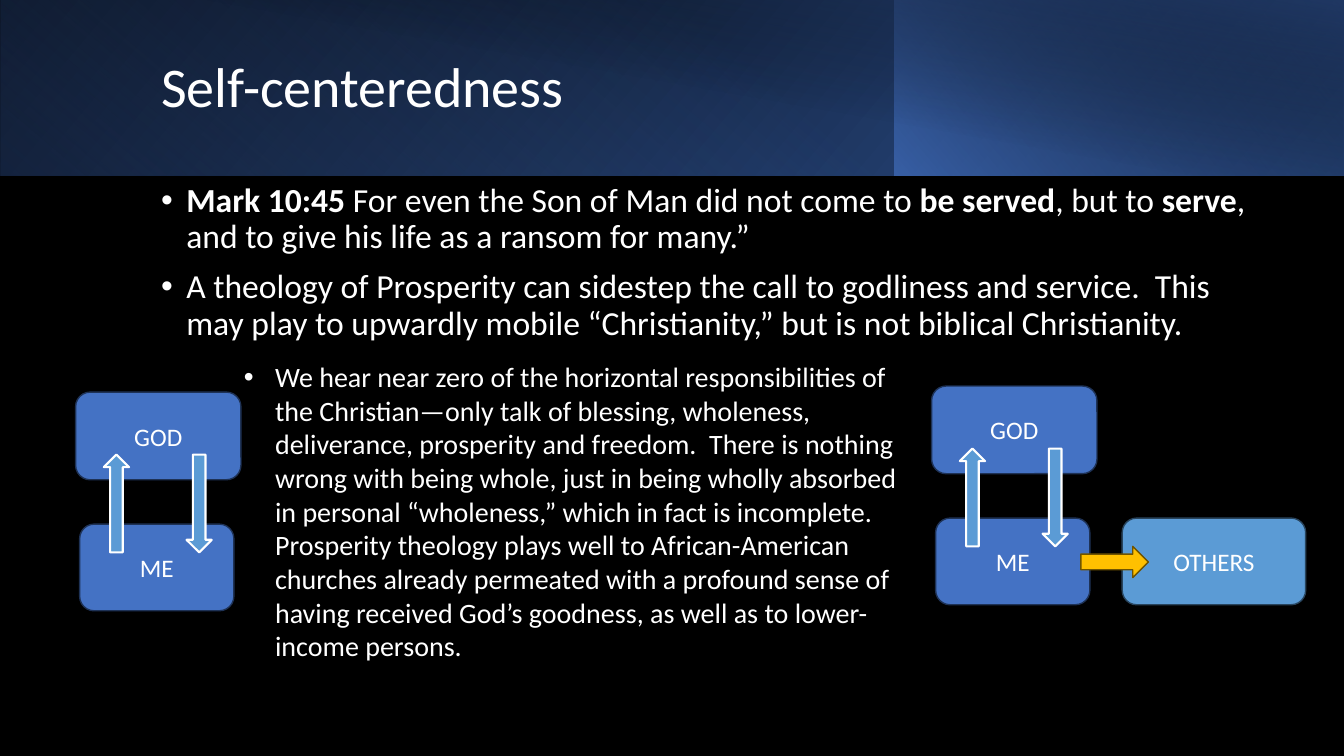
from dataclasses import dataclass
from typing import NamedTuple

from lxml import etree
from pptx import Presentation
from pptx.dml.color import RGBColor
from pptx.enum.shapes import MSO_SHAPE
from pptx.enum.text import MSO_ANCHOR, PP_ALIGN
from pptx.oxml.ns import qn
from pptx.util import Inches, Pt

RECT, ROUND = MSO_SHAPE.RECTANGLE, MSO_SHAPE.ROUNDED_RECTANGLE
UP, RIGHT = MSO_SHAPE.UP_ARROW, MSO_SHAPE.RIGHT_ARROW
MIDDLE, TOP = MSO_ANCHOR.MIDDLE, MSO_ANCHOR.TOP
CENTER = PP_ALIGN.CENTER


@dataclass(frozen=True)
class Theme:
    font: str = "Calibri"
    back: str = "000000"
    text: str = "FFFFFF"
    blue: str = "4472C4"
    edge: str = "1E3256"
    mid: str = "2F5597"
    navy: str = "203864"
    sky: str = "5B9BD5"
    sky_edge: str = "28445D"
    gold: str = "FFC000"
    gold_edge: str = "705400"
    title: int = 40
    body: int = 24
    note: int = 20
    label: int = 18


THEME = Theme()


class Area(NamedTuple):
    left: float
    top: float
    width: float
    height: float


class Stop(NamedTuple):
    place: int
    color: str
    alpha: int = 100


class Band(NamedTuple):
    area: Area
    angle: int
    stops: tuple[Stop, Stop]
    turn: int = 0
    flip: bool = True


class Part(NamedTuple):
    kind: MSO_SHAPE
    area: Area
    fill: str
    line: str
    label: str = ""
    weight: float = 1
    turn: int = 0


class Style(NamedTuple):
    size: int
    indent: float = 0
    lines: float = 1
    before: int = 0


class Span(NamedTuple):
    text: str
    bold: bool = False


BANDS = (
    Band(Area(0, 0, 13.33, 1.74), 140,
         (Stop(0, THEME.back), Stop(100, THEME.mid))),
    Band(Area(0, 0, 8.88, 1.74), 230,
         (Stop(20, THEME.blue, 0), Stop(100, THEME.navy, 55)), turn=180),
    Band(Area(8.87, 0, 4.46, 1.74), 220,
         (Stop(0, THEME.blue, 66), Stop(100, THEME.back, 30))),
    Band(Area(0.5, 0, 12.83, 1.75), 280,
         (Stop(50, THEME.back, 0), Stop(99, THEME.navy, 52)), flip=False),
)

TITLE = [[Span("Self-centeredness")]]
BODY = [
    [Span("Mark 10:45", True),
     Span(" For even the Son of Man did not come to "),
     Span("be served", True), Span(", but to "), Span("serve", True),
     Span(", and to give his life as a ransom for many.”")],
    [Span("A theology of Prosperity can sidestep the call to godliness and "
          "service.  This may play to upwardly mobile “Christianity,” but is "
          "not biblical Christianity.")],
]
NOTE = [[Span(
    "We hear near zero of the horizontal responsibilities of the "
    "Christian—only talk of blessing, wholeness, deliverance, prosperity and "
    "freedom.  There is nothing wrong with being whole, just in being wholly "
    "absorbed in personal “wholeness,” which in fact is incomplete.  "
    "Prosperity theology plays well to African-American churches already "
    "permeated with a profound sense of having received God’s goodness, as "
    "well as to lower-income persons.")]]


def pair(left: float, top: float) -> list[Part]:
    """Return the GOD and ME boxes with the two arrows between them."""
    boxes = [
        Part(ROUND, Area(left, top, 1.64, 0.87), THEME.blue, THEME.edge, "GOD"),
        Part(ROUND, Area(left + 0.04, top + 1.31, 1.53, 0.86),
             THEME.blue, THEME.edge, "ME"),
    ]
    arrows = [
        Part(UP, Area(left + shift, top + 0.62, 0.25, 0.97),
             THEME.sky, THEME.text, weight=1.5, turn=turn)
        for shift, turn in ((0.28, 0), (1.1, 180))
    ]
    return boxes + arrows


def add_shape(slide, kind: MSO_SHAPE, area: Area, turn: int):
    shape = slide.shapes.add_shape(kind, *map(Inches, area))
    shape.rotation = turn
    shape.shadow.inherit = False
    return shape


def draw_band(slide, band: Band) -> None:
    shape = add_shape(slide, RECT, band.area, band.turn)
    shape.line.fill.background()
    props = shape.element.spPr
    if band.flip:
        props.find(qn("a:xfrm")).set("flipH", "1")
    grad = etree.Element(qn("a:gradFill"), rotWithShape="1")
    stops = etree.SubElement(grad, qn("a:gsLst"))
    for stop in band.stops:
        point = etree.SubElement(stops, qn("a:gs"), pos=str(stop.place * 1000))
        color = etree.SubElement(point, qn("a:srgbClr"), val=stop.color)
        etree.SubElement(color, qn("a:alpha"), val=str(stop.alpha * 1000))
    etree.SubElement(grad, qn("a:lin"), ang=str(band.angle * 60000), scaled="0")
    props.find(qn("a:prstGeom")).addnext(grad)


def set_font(run, size: int, bold: bool = False) -> None:
    run.font.name = THEME.font
    run.font.size = Pt(size)
    run.font.bold = bold
    run.font.color.rgb = RGBColor.from_string(THEME.text)


def draw_part(slide, part: Part) -> None:
    shape = add_shape(slide, part.kind, part.area, part.turn)
    shape.fill.solid()
    shape.fill.fore_color.rgb = RGBColor.from_string(part.fill)
    shape.line.color.rgb = RGBColor.from_string(part.line)
    shape.line.width = Pt(part.weight)
    if part.label:
        frame = shape.text_frame
        frame.text = part.label
        frame.vertical_anchor = MIDDLE
        frame.paragraphs[0].alignment = CENTER
        set_font(frame.paragraphs[0].runs[0], THEME.label)


def draw_text(slide, area: Area, rows: list[list[Span]], style: Style,
              anchor: MSO_ANCHOR = TOP) -> None:
    frame = slide.shapes.add_textbox(*map(Inches, area)).text_frame
    frame.word_wrap = True
    frame.vertical_anchor = anchor
    for index, row in enumerate(rows):
        para = frame.add_paragraph() if index else frame.paragraphs[0]
        para.line_spacing = style.lines
        para.space_before = Pt(style.before)
        if style.indent:
            props = para._p.get_or_add_pPr()
            props.set("marL", str(Inches(style.indent)))
            props.set("indent", str(-Inches(style.indent)))
            etree.SubElement(props, qn("a:buFont"), typeface="Arial")
            etree.SubElement(props, qn("a:buChar"), char="•")
        for span in row:
            run = para.add_run()
            run.text = span.text
            set_font(run, style.size, span.bold)


def main() -> None:
    deck = Presentation()
    deck.slide_width, deck.slide_height = Inches(13.33), Inches(7.5)
    slide = deck.slides.add_slide(deck.slide_layouts[6])
    slide.background.fill.solid()
    slide.background.fill.fore_color.rgb = RGBColor.from_string(THEME.back)
    for band in BANDS:
        draw_band(slide, band)
    draw_text(slide, Area(1.5, 0.32, 10.82, 1.13), TITLE,
              Style(THEME.title, lines=0.9), MIDDLE)
    draw_text(slide, Area(1.5, 1.77, 11.04, 2.55), BODY,
              Style(THEME.body, 0.25, 0.9, 10))
    draw_text(slide, Area(2.32, 3.52, 6.86, 3.43), NOTE, Style(THEME.note, 0.31))
    others = Part(ROUND, Area(11.13, 5.14, 1.82, 0.86),
                  THEME.sky, THEME.sky_edge, "OTHERS")
    reach = Part(RIGHT, Area(10.72, 5.42, 0.67, 0.31),
                 THEME.gold, THEME.gold_edge)
    for part in pair(0.75, 3.89) + pair(9.24, 3.83) + [others, reach]:
        draw_part(slide, part)
    deck.save("out.pptx")


if __name__ == "__main__":
    main()
